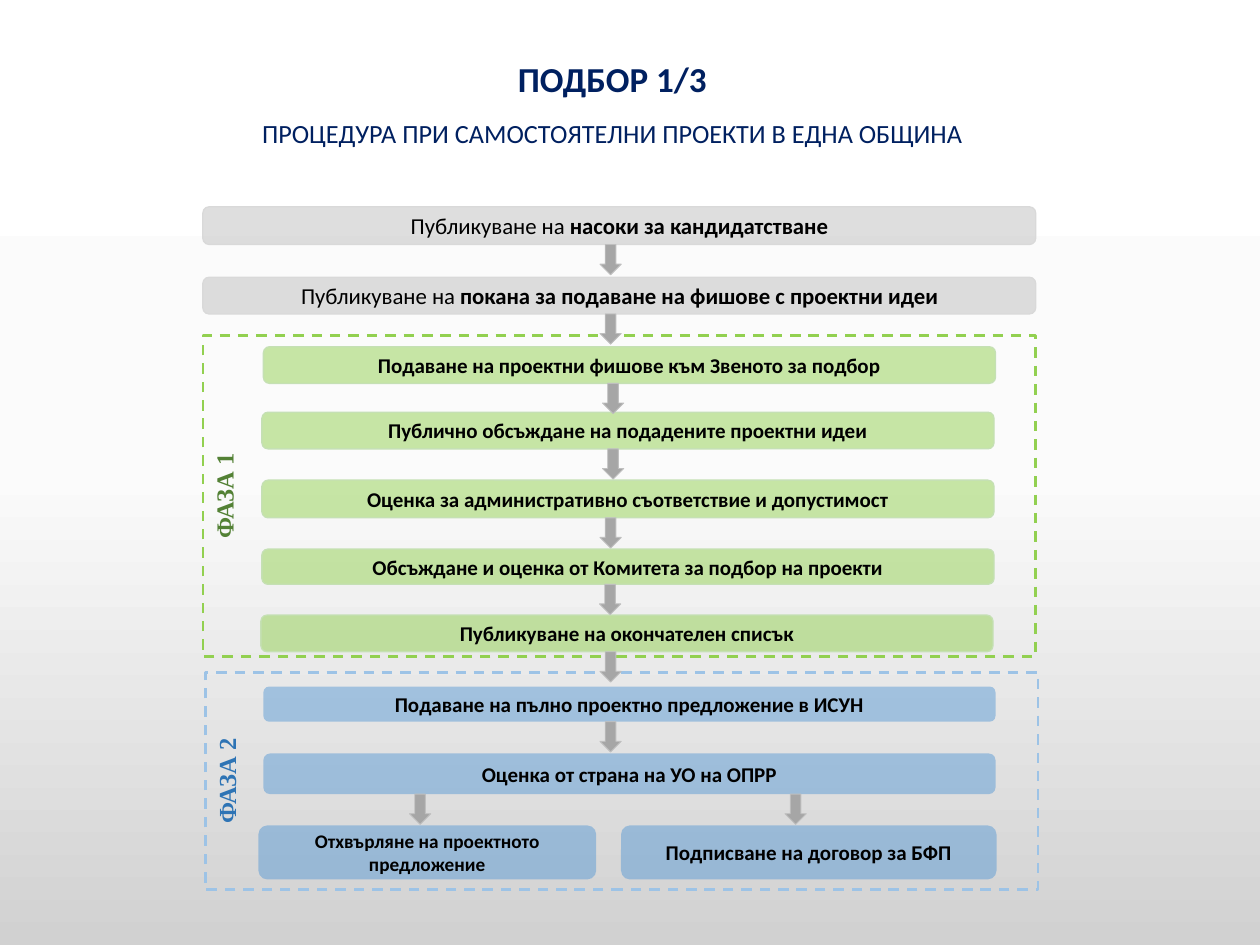
"""Builds a slide with the two-phase selection procedure for municipal projects."""
import copy

import lxml.etree
import pptx
import pptx.dml.color
import pptx.enum.dml
import pptx.enum.shapes
import pptx.enum.text
import pptx.oxml.ns
import pptx.util

Cm, Pt = pptx.util.Cm, pptx.util.Pt
SHAPES = pptx.enum.shapes.MSO_SHAPE
ALIGN = pptx.enum.text.PP_ALIGN
ANCHOR = pptx.enum.text.MSO_ANCHOR
qn = pptx.oxml.ns.qn

COLORS = {
    "title": "002060", "text": "000000",
    "call": "BFBFBF", "call_line": "D9D9D9",
    "phase1": "92D050", "phase1_line": "C5E0B4", "phase1_label": "538135",
    "phase2": "5B9BD5", "phase2_frame": "9DC3E6", "phase2_label": "2E74B5",
    "arrow": "A6A6A6", "arrow_line": "BFBFBF",
    "sky": "FFFFFF", "haze": "FBFBFB", "ground": "D1D1D1",
}
ARROW_WIDTH, ARROW_HEIGHT = 0.43, 0.61
WIDE, STEP = 16.79, 14.76

CALLS = [
    (4.09, 4.17, 0.76, "насоки за кандидатстване"),
    (4.09, 5.59, 0.74, "покана за подаване на фишове с проектни идеи"),
]
PHASE1 = [
    (5.31, 6.99, 0.74, "Подаване на проектни фишове към Звеното за подбор", 12.36),
    (5.28, 8.31, 0.74, "Публично обсъждане на подадените проектни идеи", 12.36),
    (5.28, 9.68, 0.76, "Оценка за административно съответствие и допустимост", 12.31),
    (5.28, 11.07, 0.71, "Обсъждане и оценка от Комитета за подбор на проекти", 12.3),
    (5.26, 12.4, 0.74, "Публикуване на окончателен списък", 12.31),
]
PHASE2 = [
    (5.31, 13.84, 0.71, "Подаване на пълно проектно предложение в ИСУН", [12.31]),
    (5.31, 15.19, 0.82, "Оценка от страна на УО на ОПРР", [8.47, 16.04]),
]
OUTCOMES = [
    (5.21, 6.81, "Отхвърляне на проектното предложение", 11),
    (12.52, 7.57, "Подписване на договор за БФП", 12),
]


def rgb(name):
    """Return the named colour."""
    return pptx.dml.color.RGBColor.from_string(COLORS[name])


def apply(target, values):
    """Set each attribute of the target from a dict."""
    for name, value in values.items():
        setattr(target, name, value)


def add_run(paragraph, text, color, **font_values):
    """Add a run with the given font values."""
    run = paragraph.add_run()
    run.text = text
    apply(run.font, {"name": "Calibri", **font_values})
    run.font.color.rgb = rgb(color)


def add_shape(slide, kind, box, fill=None, line=None, width=0.75):
    """Add a flat preset shape with optional fill and line."""
    shape = slide.shapes.add_shape(kind, *map(Cm, box))
    shape.shadow.inherit = False
    if fill:
        shape.fill.solid()
        shape.fill.fore_color.rgb = rgb(fill)
    else:
        shape.fill.background()
    if line:
        shape.line.color.rgb = rgb(line)
        shape.line.width = Pt(width)
    else:
        shape.line.fill.background()
    return shape


def add_step(slide, box, runs, fill, line=None, size=12):
    """Add a half-transparent rounded box; runs are (text, bold) pairs."""
    step = add_shape(slide, SHAPES.ROUNDED_RECTANGLE, box, fill, line)
    tint = step._element.spPr.find(qn("a:solidFill")).find(qn("a:srgbClr"))
    lxml.etree.SubElement(tint, qn("a:alpha")).set("val", "50000")
    apply(step.text_frame, {"word_wrap": True, "vertical_anchor": ANCHOR.MIDDLE})
    paragraph = step.text_frame.paragraphs[0]
    paragraph.alignment = ALIGN.CENTER
    for text, bold in runs:
        add_run(paragraph, text, "text", size=Pt(size), bold=bold)


def add_phase(slide, box, label, line, color):
    """Add a dashed frame with an upward-reading label."""
    frame = add_shape(slide, SHAPES.RECTANGLE, box, line=line, width=1.5)
    frame.line.dash_style = pptx.enum.dml.MSO_LINE.DASH
    apply(frame.text_frame, {"word_wrap": True, "vertical_anchor": ANCHOR.TOP})
    frame.text_frame._txBody.bodyPr.set("vert", "vert270")
    paragraph = frame.text_frame.paragraphs[0]
    paragraph.alignment = ALIGN.CENTER
    add_run(paragraph, label, color, name="Times New Roman", size=Pt(14), bold=True)


def add_arrow(slide, center, top):
    """Add a down arrow below a step."""
    box = (center - ARROW_WIDTH / 2, top, ARROW_WIDTH, ARROW_HEIGHT)
    add_shape(slide, SHAPES.DOWN_ARROW, box, "arrow", "arrow_line", 0.5)


def add_title(slide):
    """Add the heading and its subtitle."""
    title = slide.shapes.add_textbox(Cm(4.09), Cm(1.04), Cm(16.51), Cm(2.08))
    title.text_frame.word_wrap = True
    heading = title.text_frame.paragraphs[0]
    subtitle = title.text_frame.add_paragraph()
    apply(heading, {"alignment": ALIGN.CENTER})
    apply(subtitle, {"alignment": ALIGN.CENTER, "space_before": Pt(10)})
    add_run(heading, "ПОДБОР 1/3", "title", size=Pt(20), bold=True)
    add_run(subtitle, "ПРОЦЕДУРА ПРИ САМОСТОЯТЕЛНИ ПРОЕКТИ В ЕДНА ОБЩИНА",
            "title", size=Pt(15), bold=False)


def set_background(slide):
    """Shade the background from white at the top to grey."""
    fill = slide.background.fill
    fill.gradient()
    fill.gradient_angle = 270
    stops = next(slide._element.iter(qn("a:gsLst")))
    stops.append(copy.deepcopy(stops[0]))
    shades = [(0, "sky"), (0.5, "haze"), (1, "ground")]
    for stop, (position, shade) in zip(fill.gradient_stops, shades):
        stop.position = position
        stop.color.rgb = rgb(shade)


def main():
    """Build and save the slide."""
    deck = pptx.Presentation()
    apply(deck, {"slide_width": Cm(25.4), "slide_height": Cm(19.05)})
    slide = deck.slides.add_slide(deck.slide_layouts[6])
    set_background(slide)
    arrows = []
    for left, top, height, text in CALLS:
        add_step(slide, (left, top, WIDE, height),
                 [("Публикуване на ", False), (text, True)], "call", "call_line", 13)
        arrows.append((12.31, top + height))
    for left, top, height, text, center in PHASE1:
        add_step(slide, (left, top, STEP, height), [(text, True)], "phase1", "phase1_line")
        arrows.append((center, top + height))
    for left, top, height, text, centers in PHASE2:
        add_step(slide, (left, top, STEP, height), [(text, True)], "phase2")
        arrows += [(center, top + height) for center in centers]
    for left, width, text, size in OUTCOMES:
        add_step(slide, (left, 16.64, width, 1.09), [(text, True)], "phase2", size=size)
    add_phase(slide, (4.14, 13.56, WIDE, 4.37), "ФАЗА 2", "phase2_frame", "phase2_label")
    add_phase(slide, (4.09, 6.76, WIDE, 6.48), "ФАЗА 1", "phase1", "phase1_label")
    for center, top in arrows:
        add_arrow(slide, center, top)
    add_title(slide)
    deck.save("out.pptx")


if __name__ == "__main__":
    main()
